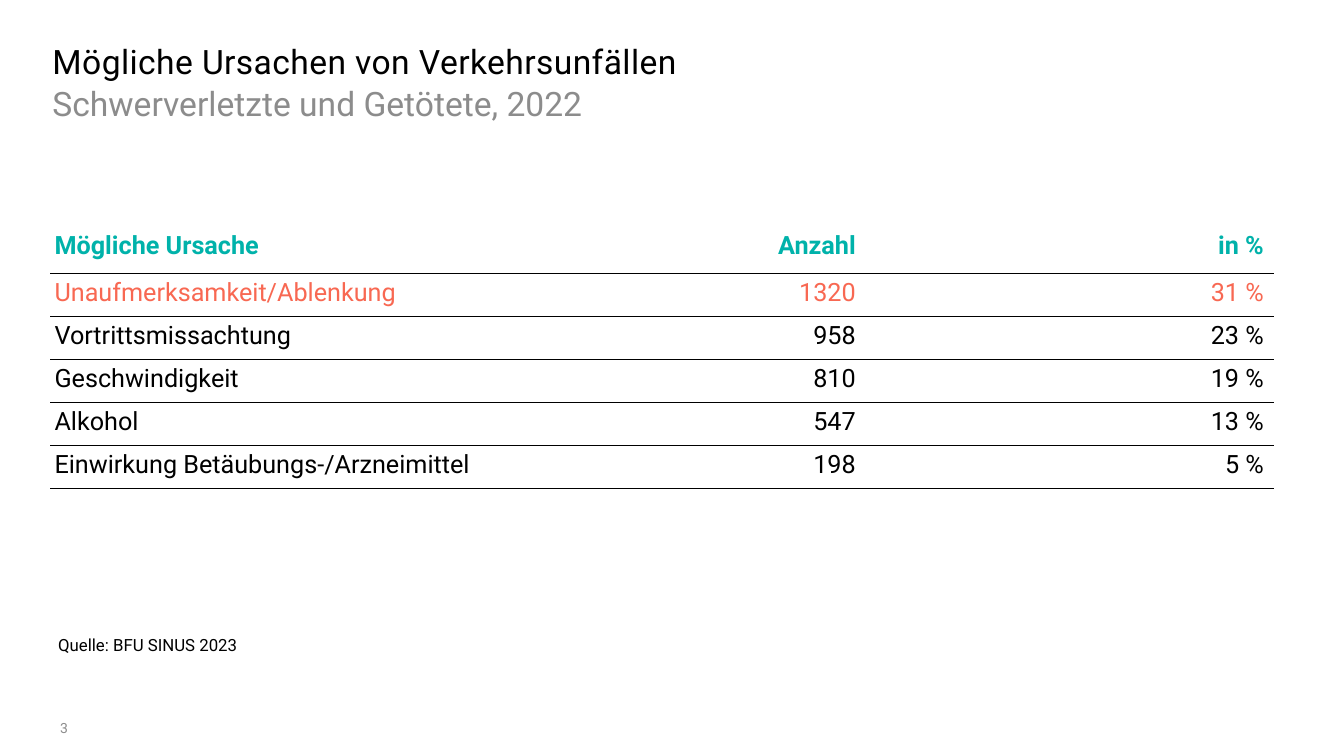
from lxml import etree
from pptx import Presentation
from pptx.dml.color import RGBColor
from pptx.enum.text import PP_ALIGN
from pptx.oxml.ns import qn
from pptx.util import Pt

LEFT = PP_ALIGN.LEFT
RIGHT = PP_ALIGN.RIGHT
FONT = "Roboto"
BLACK = "000000"
GREY = "8C8C8C"
TEAL = "00B2AA"
CORAL = "F86852"

COLUMN_WIDTHS = [463, 119.5, 291.5]
HEADER_HEIGHT = 34
ROW_HEIGHT = 30.7
CAUSES = [
    ("Mögliche Ursache", "Anzahl", "in %"),
    ("Unaufmerksamkeit/Ablenkung", "1320", "31 %"),
    ("Vortrittsmissachtung", "958", "23 %"),
    ("Geschwindigkeit", "810", "19 %"),
    ("Alkohol", "547", "13 %"),
    ("Einwirkung Betäubungs-/Arzneimittel", "198", "5 %"),
]


def rgb(color):
    return RGBColor.from_string(color)


def write(frame, text, size, color, bold=False, align=LEFT):
    frame.text = text
    para = frame.paragraphs[0]
    para.alignment = align
    span = para.runs[0]
    span.font.name = FONT
    span.font.size = Pt(size)
    span.font.bold = bold
    span.font.color.rgb = rgb(color)
    return para


def set_insets(target, left, top, right, bottom):
    target.margin_left, target.margin_top = Pt(left), Pt(top)
    target.margin_right, target.margin_bottom = Pt(right), Pt(bottom)


def add_text(slide, left, top, width, height, text, size, color, insets=(0, 0, 0, 0)):
    box = slide.shapes.add_textbox(Pt(left), Pt(top), Pt(width), Pt(height))
    frame = box.text_frame
    frame.word_wrap = True
    set_insets(frame, *insets)
    return write(frame, text, size, color)


def set_border(cell, side, width):
    line = etree.SubElement(cell._tc.get_or_add_tcPr(), qn(f"a:ln{side}"))
    if not width:
        etree.SubElement(line, qn("a:noFill"))
        return
    line.set("w", str(Pt(width)))
    fill = etree.SubElement(line, qn("a:solidFill"))
    etree.SubElement(fill, qn("a:srgbClr"), val=BLACK)


def style_cell(cell, top_width, bottom_width):
    set_insets(cell, 3, 3.6, 7.2, 3.6)
    for side, width in (("L", 0), ("R", 0), ("T", top_width), ("B", bottom_width)):
        set_border(cell, side, width)
    cell.fill.background()


def add_cause_table(slide, left, top):
    height = HEADER_HEIGHT + ROW_HEIGHT * (len(CAUSES) - 1)
    frame = slide.shapes.add_table(
        len(CAUSES), len(COLUMN_WIDTHS),
        Pt(left), Pt(top), Pt(sum(COLUMN_WIDTHS)), Pt(height))
    table = frame.table
    table.horz_banding = False
    for column, width in zip(table.columns, COLUMN_WIDTHS):
        column.width = Pt(width)
    row_colors = {0: TEAL, 1: CORAL}
    for row, values in enumerate(CAUSES):
        is_header = row == 0
        table.rows[row].height = Pt(HEADER_HEIGHT if is_header else ROW_HEIGHT)
        top_width = 0 if is_header else 0.5
        bottom_width = 1 if row == len(CAUSES) - 1 else 0.5
        for column, value in enumerate(values):
            cell = table.cell(row, column)
            style_cell(cell, top_width, bottom_width)
            write(cell.text_frame, value, 18, row_colors.get(row, BLACK),
                  bold=is_header, align=RIGHT if column else LEFT)


def main():
    deck = Presentation()
    deck.slide_width, deck.slide_height = Pt(960), Pt(540)
    slide = deck.slides.add_slide(deck.slide_layouts[6])

    title = add_text(slide, 37.5, 29, 884, 25, "Mögliche Ursachen von Verkehrsunfällen", 24, BLACK)
    title.runs[0].font._element.set("spc", "30")
    subtitle = add_text(slide, 37.5, 57.5, 884, 28, "Schwerverletzte und Getötete, 2022", 24, GREY)
    subtitle.line_spacing = 1.05

    add_cause_table(slide, 36, 161.3)
    add_text(slide, 34.5, 450, 895, 21.6, "Quelle: BFU SINUS 2023", 12, BLACK, (7.2, 3.6, 7.2, 3.6))
    add_text(slide, 43, 514, 64, 13, "3", 10, GREY)

    deck.save("out.pptx")


if __name__ == "__main__":
    main()
